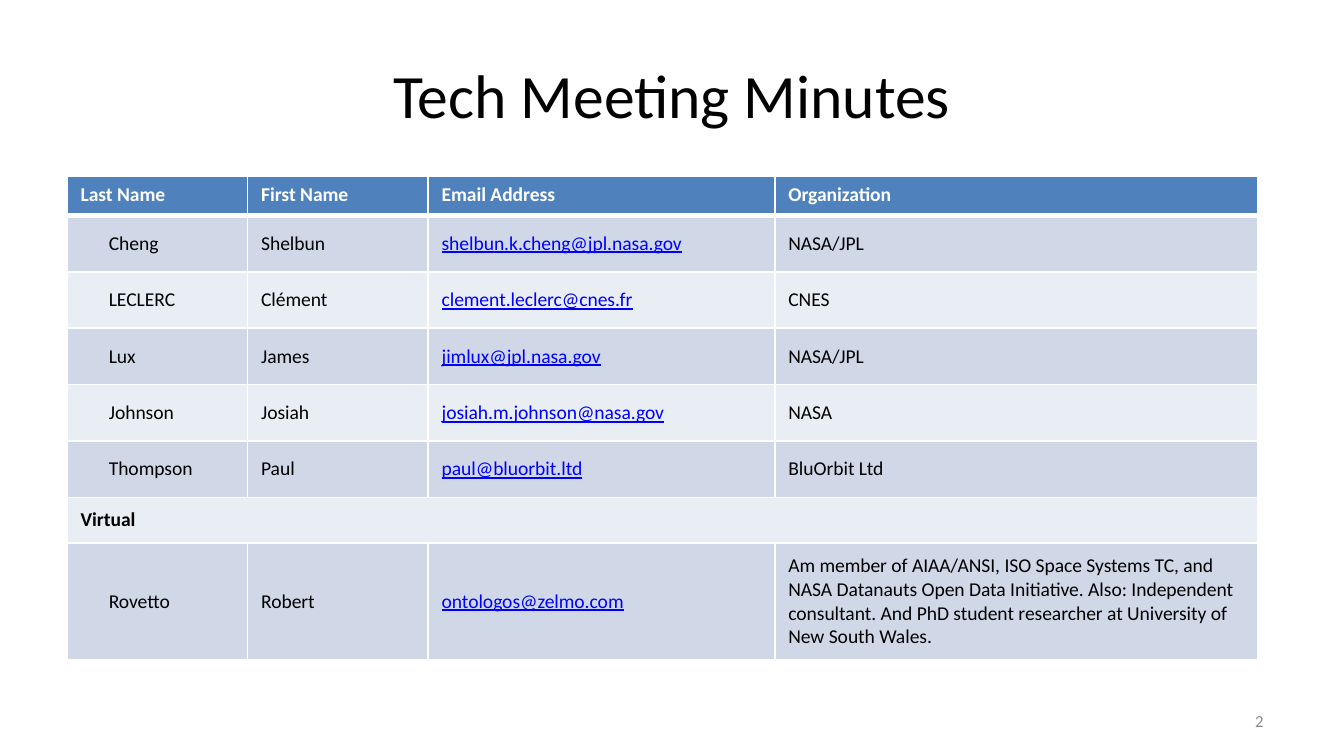
import pptx
import pptx.dml.color
import pptx.enum.text
import pptx.oxml
import pptx.oxml.ns
import pptx.util

RGBColor = pptx.dml.color.RGBColor
PP_ALIGN = pptx.enum.text.PP_ALIGN
MIDDLE = pptx.enum.text.MSO_ANCHOR.MIDDLE
TOP = pptx.enum.text.MSO_ANCHOR.TOP

BLACK = RGBColor(0x00, 0x00, 0x00)
WHITE = RGBColor(0xFF, 0xFF, 0xFF)
GRAY = RGBColor(0x8C, 0x8C, 0x8C)
LINK = RGBColor(0x00, 0x00, 0xFF)
HEADER = RGBColor(0x4F, 0x81, 0xBD)
BANDS = [RGBColor(0xE9, 0xED, 0xF4), RGBColor(0xD0, 0xD8, 0xE8)]

GRID_COLUMNS, GRID_ROWS = 100, 56.25
EMAIL_COLUMN = 2
COLUMNS = [13.43, 13.43, 25.8, 35.9]
ATTENDEES = [
    ["Last Name", "First Name", "Email Address", "Organization"],
    ["Cheng", "Shelbun", "shelbun.k.cheng@jpl.nasa.gov", "NASA/JPL"],
    ["LECLERC", "Clément", "clement.leclerc@cnes.fr", "CNES"],
    ["Lux", "James", "jimlux@jpl.nasa.gov", "NASA/JPL"],
    ["Johnson", "Josiah", "josiah.m.johnson@nasa.gov", "NASA"],
    ["Thompson", "Paul", "paul@bluorbit.ltd", "BluOrbit Ltd"],
    ["Virtual"],
    ["Rovetto", "Robert", "ontologos@zelmo.com",
     "Am member of AIAA/ANSI, ISO Space Systems TC, and NASA Datanauts Open "
     "Data Initiative. Also: Independent consultant. And PhD student "
     "researcher at University of New South Wales."],
]
ROWS = [2.9] + [4.2] * 5 + [3.4, 8.7]


class Deck:
    font = "Calibri"

    def __init__(self, prs):
        self.prs = prs
        self.s = prs.slides.add_slide(prs.slide_layouts[6])

    def x(self, columns):
        return round(self.prs.slide_width * columns / GRID_COLUMNS)

    def y(self, rows):
        return round(self.prs.slide_height * rows / GRID_ROWS)

    def box(self, left, top, width, height):
        return self.x(left), self.y(top), self.x(width), self.y(height)

    def run(self, p, text, size, color, bold=False, underline=False):
        r = p.add_run()
        r.text = text
        r.font.name = self.font
        r.font.size = pptx.util.Pt(size)
        r.font.color.rgb = color
        r.font.bold = bold
        r.font.underline = underline

    def text(self, text, area, size, color, align):
        sp = self.s.shapes.add_textbox(*self.box(*area))
        tf = sp.text_frame
        tf.word_wrap = True
        tf.vertical_anchor = MIDDLE
        p = tf.paragraphs[0]
        p.alignment = align
        self.run(p, text, size, color)

    def borders(self, cell, bottom):
        tc_pr = cell._tc.get_or_add_tcPr()
        for i, side in enumerate("LRTB"):
            width = pptx.util.Pt(bottom if side == "B" else 1)
            tc_pr.insert(i, pptx.oxml.parse_xml(
                f'<a:ln{side} {pptx.oxml.ns.nsdecls("a")} w="{width}"><a:solidFill>'
                f'<a:srgbClr val="{WHITE}"/></a:solidFill></a:ln{side}>'))

    def cell(self, cell, text, row, column, section):
        header = row == 0
        link = column == EMAIL_COLUMN and not header
        indented = column == 0 and not header and not section
        cell.fill.solid()
        cell.fill.fore_color.rgb = HEADER if header else BANDS[row % 2]
        cell.vertical_anchor = TOP if header else MIDDLE
        cell.margin_left = self.x(3.1 if indented else 1)
        cell.margin_right = self.x(1)
        cell.margin_top = cell.margin_bottom = self.y(0.5 if header else 0.8)
        self.borders(cell, 3 if header else 1)
        if text:
            color = WHITE if header else LINK if link else BLACK
            self.run(cell.text_frame.paragraphs[0], text, 10.5, color,
                     header or section, link)

    def table(self, left, top, columns, rows, values):
        area = self.box(left, top, sum(columns), sum(rows))
        table = self.s.shapes.add_table(len(rows), len(columns), *area).table
        for column, width in zip(table.columns, columns):
            column.width = self.x(width)
        for i, (height, texts) in enumerate(zip(rows, values)):
            table.rows[i].height = self.y(height)
            section = len(texts) == 1
            for j in range(len(columns)):
                text = texts[j] if j < len(texts) else ""
                self.cell(table.cell(i, j), text, i, j, section)
            if section:
                table.cell(i, 0).merge(table.cell(i, len(columns) - 1))


def main():
    prs = pptx.Presentation()
    prs.slide_width = pptx.util.Inches(10)
    prs.slide_height = prs.slide_width * 9 // 16
    deck = Deck(prs)
    deck.text("Tech Meeting Minutes", (5, 2.25, 90, 9.4), 33, BLACK, PP_ALIGN.CENTER)
    deck.table(5, 13.13, COLUMNS, ROWS, ATTENDEES)
    deck.text("2", (71.7, 52.14, 23.3, 3), 9, GRAY, PP_ALIGN.RIGHT)
    prs.save("out.pptx")


if __name__ == "__main__":
    main()
